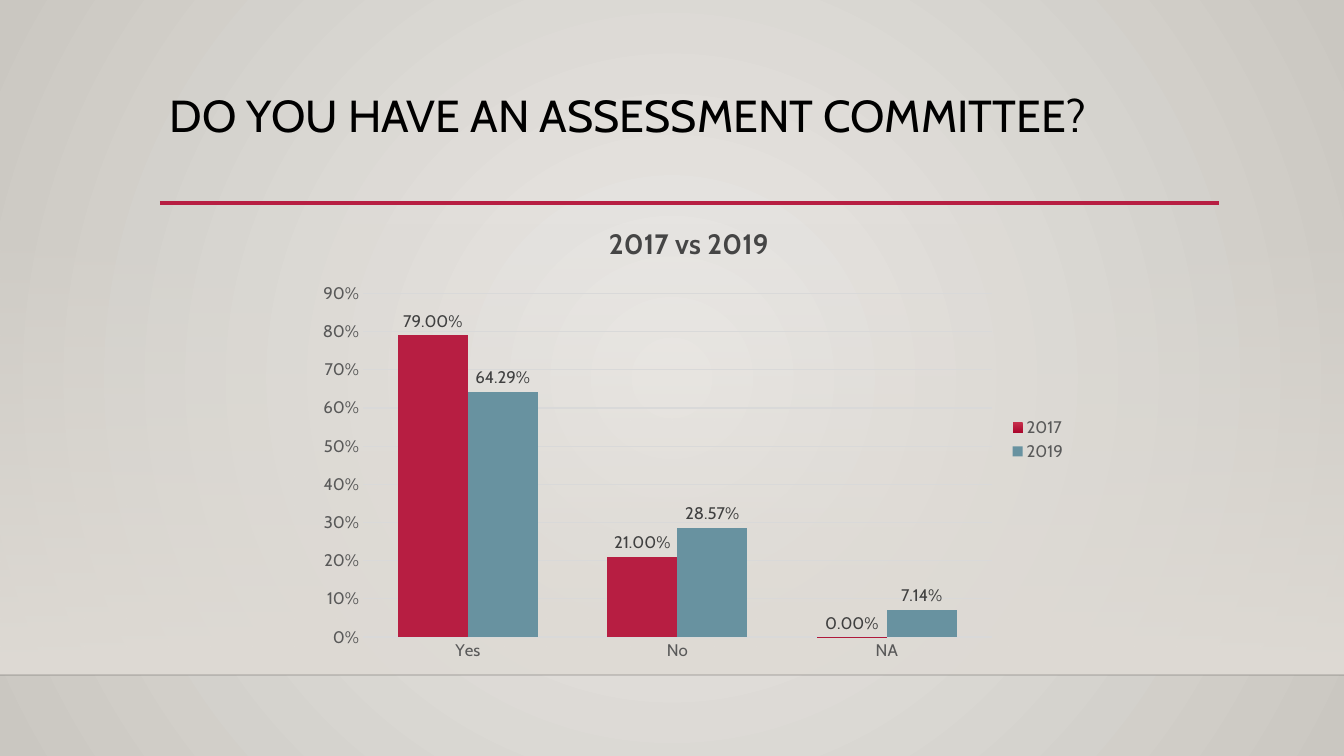
from pptx import Presentation
from pptx.chart.data import CategoryChartData
from pptx.dml.color import RGBColor
from pptx.enum.chart import XL_CHART_TYPE, XL_LABEL_POSITION, XL_LEGEND_POSITION, XL_TICK_MARK
from pptx.enum.shapes import MSO_CONNECTOR, MSO_SHAPE
from pptx.enum.text import MSO_ANCHOR
from pptx.oxml import parse_xml
from pptx.oxml.ns import nsdecls, qn
from pptx.util import Pt

COLUMN = XL_CHART_TYPE.COLUMN_CLUSTERED
ABOVE = XL_LABEL_POSITION.OUTSIDE_END
RIGHT = XL_LEGEND_POSITION.RIGHT
BARE = XL_TICK_MARK.NONE
LINE = MSO_CONNECTOR.STRAIGHT
RECT = MSO_SHAPE.RECTANGLE
TOP = MSO_ANCHOR.TOP

BLACK = RGBColor(0x00, 0x00, 0x00)
DARK = RGBColor(0x40, 0x40, 0x40)
HEAD = RGBColor(0x45, 0x45, 0x45)
GREY = RGBColor(0x59, 0x59, 0x59)
PALE = RGBColor(0xD9, 0xD9, 0xD9)
LIGHT = RGBColor(0xEC, 0xEA, 0xE7)
STONE = RGBColor(0xCA, 0xC7, 0xC1)
SAND = RGBColor(0xDF, 0xDB, 0xD5)
RED = RGBColor(0xB7, 0x1E, 0x42)
ROSE = RGBColor(0xC7, 0x30, 0x4C)
WINE = RGBColor(0xAA, 0x06, 0x2C)
BLUE = RGBColor(0x68, 0x92, 0xA0)
FACE = "Cabin"


def px(*nums):
    return [round(n * 914400 / 100.8) for n in nums]


def blend(fill, first, last):
    fill.gradient()
    for stop, color, place in zip(fill.gradient_stops, (first, last), (0, 1)):
        stop.color.rgb = color
        stop.position = place


deck = Presentation()
deck.slide_width, deck.slide_height = px(1344, 756)
slide = deck.slides.add_slide(deck.slide_layouts[6])
shapes = slide.shapes

blend(slide.background.fill, LIGHT, STONE)
lin = slide.element.xpath(".//p:bg//a:lin")[0]
lin.getparent().replace(lin, parse_xml(
    f'<a:path {nsdecls("a")} path="circle">'
    '<a:fillToRect l="50000" t="50000" r="50000" b="50000"/></a:path>'))

band = shapes.add_shape(RECT, *px(0, 223, 1344, 452))
band.shadow.inherit = False
band.line.fill.background()
blend(band.fill, SAND, SAND)
band.fill.gradient_angle = 270
tint = band.element.xpath(".//a:gs/a:srgbClr")[0]
tint.append(parse_xml(f'<a:alpha {nsdecls("a")} val="0"/>'))

for left, right, y, color, width, alpha in (
    (0, 1344, 675, BLACK, 1, 20000),
    (160, 1219, 203, RED, 2.5, 100000),
):
    rule = shapes.add_connector(LINE, *px(left, y, right, y))
    rule.line.color.rgb = color
    rule.line.width = Pt(width)
    tint = rule.element.xpath(".//a:ln//a:srgbClr")[0]
    tint.append(parse_xml(f'<a:alpha {nsdecls("a")} val="{alpha}"/>'))
    rule.element.spPr.append(parse_xml(f'<a:effectLst {nsdecls("a")}/>'))

title = shapes.add_textbox(*px(160, 89, 1058, 116)).text_frame
title.word_wrap = True
title.vertical_anchor = TOP
head = title.paragraphs[0]
head.text = "DO YOU HAVE AN ASSESSMENT COMMITTEE?"
head.line_spacing = 0.9

data = CategoryChartData(number_format="0.00%")
data.categories = ["Yes", "No", "NA"]
data.add_series("2017", [0.79, 0.21, 0])
data.add_series("2019", [0.6429, 0.2857, 0.0714])
chart = shapes.add_chart(COLUMN, *px(301, 204, 776, 471), data).chart
chart.has_title = True
name = chart.chart_title.text_frame.paragraphs[0]
name.text = "2017 vs 2019"
chart.chart_title.include_in_layout = False
chart.has_legend = True
chart.legend.position = RIGHT
chart.legend.include_in_layout = False

plot = chart.plots[0]
plot.gap_width = 100
plot.overlap = 0
plot.vary_by_categories = False
area = chart.element.find(".//" + qn("c:plotArea"))
for old in area.findall(qn("c:layout")):
    area.remove(old)
frame = {"x": 0.08, "y": 0.19, "w": 0.81, "h": 0.73}
sizes = "".join(f'<c:{key} val="{val}"/>' for key, val in frame.items())
area.insert(0, parse_xml(
    f'<c:layout {nsdecls("c")}><c:manualLayout><c:layoutTarget val="inner"/>'
    f'<c:xMode val="edge"/><c:yMode val="edge"/>{sizes}</c:manualLayout></c:layout>'))

cats, vals = chart.category_axis, chart.value_axis
for axis in (cats, vals):
    axis.major_tick_mark = BARE
    axis.minor_tick_mark = BARE
cats.format.line.color.rgb = PALE
cats.format.line.width = Pt(1)
vals.format.line.fill.background()
vals.minimum_scale = 0
vals.maximum_scale = 0.9
vals.major_unit = 0.1
vals.tick_labels.number_format = "0%"
vals.tick_labels.number_format_is_linked = False
grid = vals.major_gridlines.format.line
grid.color.rgb = PALE
grid.width = Pt(0.75)

reds, blues = plot.series
blend(reds.format.fill, ROSE, WINE)
reds.format.fill.gradient_angle = 270
for spot in range(2):
    fill = reds.points[spot].format.fill
    fill.solid()
    fill.fore_color.rgb = RED
blues.format.fill.solid()
blues.format.fill.fore_color.rgb = BLUE
for bars in (reds, blues):
    bars.invert_if_negative = False
    tags = bars.data_labels
    tags.show_value = True
    tags.position = ABOVE
    tags.number_format = "0.00%"
    tags.number_format_is_linked = False

for font, size, color, bold in (
    (head.runs[0].font, 32, BLACK, False),
    (chart.font, 10, BLACK, False),
    (name.runs[0].font, 20, HEAD, True),
    (chart.legend.font, 12, GREY, False),
    (cats.tick_labels.font, 12, GREY, False),
    (vals.tick_labels.font, 12, GREY, False),
    (reds.data_labels.font, 12, DARK, False),
    (blues.data_labels.font, 12, DARK, False),
):
    font.color.rgb = color
    for key, val in {"name": FACE, "size": Pt(size), "bold": bold}.items():
        setattr(font, key, val)

deck.save("out.pptx")
